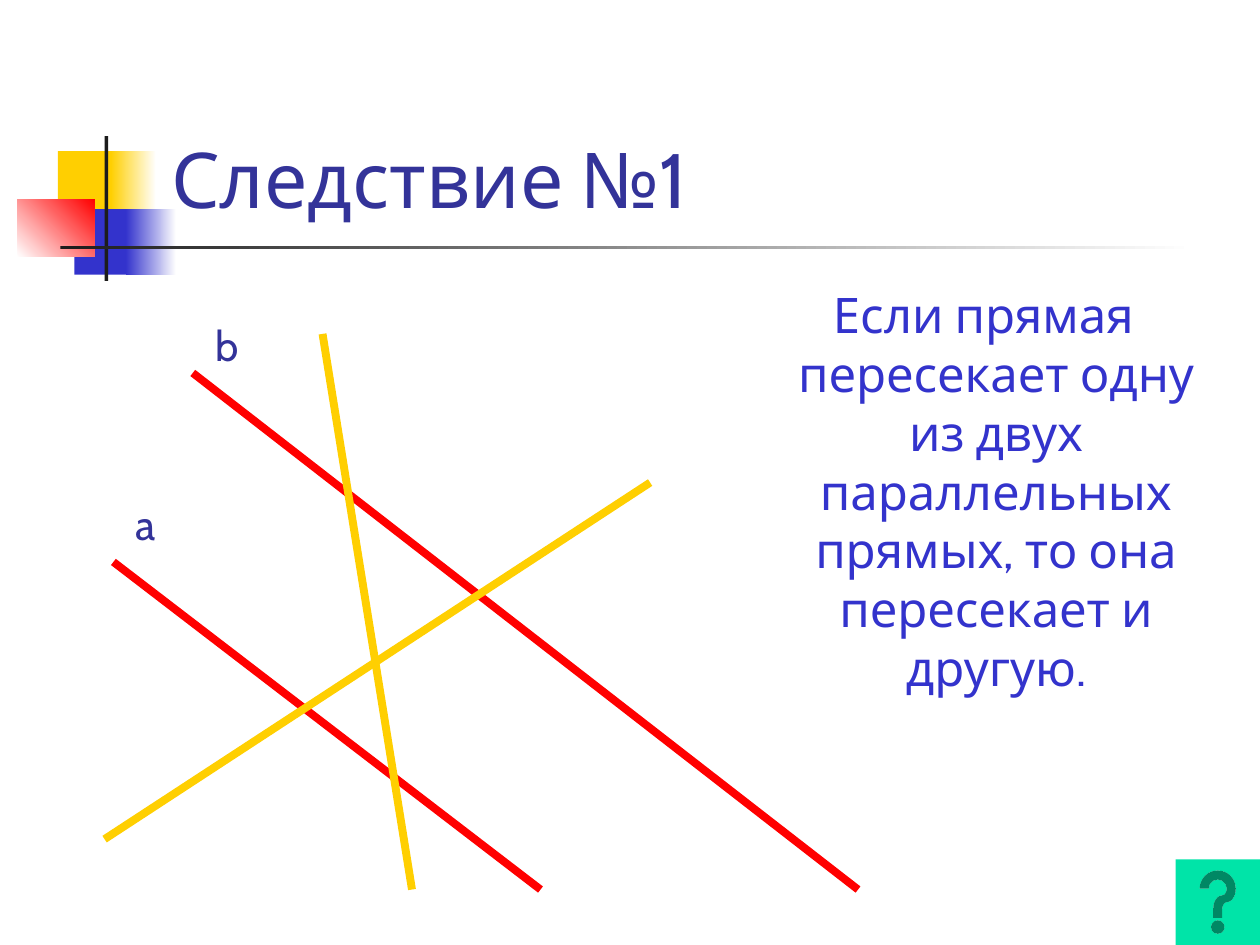
from dataclasses import dataclass
from typing import Optional

from lxml import etree
from pptx import Presentation
from pptx.dml.color import RGBColor
from pptx.enum.shapes import MSO_CONNECTOR, MSO_SHAPE
from pptx.enum.text import MSO_ANCHOR, MSO_AUTO_SIZE, PP_ALIGN
from pptx.oxml.ns import qn
from pptx.util import Inches, Pt

RECTANGLE = MSO_SHAPE.RECTANGLE
HELP_BUTTON = MSO_SHAPE.ACTION_BUTTON_HELP
STRAIGHT = MSO_CONNECTOR.STRAIGHT
LEFT, CENTER = PP_ALIGN.LEFT, PP_ALIGN.CENTER
TOP, BOTTOM = MSO_ANCHOR.TOP, MSO_ANCHOR.BOTTOM
NO_AUTOFIT = MSO_AUTO_SIZE.NONE

FONT = "Cabin"
COLORS = {
    "yellow": "FFCF01",
    "blue": "3333CC",
    "navy": "333399",
    "red": "FF0000",
    "black": "1C1C1C",
    "white": "FFFFFF",
    "green": "00E4A8",
}


@dataclass
class Block:
    left: float
    top: float
    width: float
    height: float
    color: str
    fade_to: Optional[str] = None
    angle: float = 0
    preset: int = RECTANGLE


@dataclass
class Line:
    start: tuple[float, float]
    end: tuple[float, float]
    color: str


@dataclass
class Label:
    left: float
    top: float
    width: float
    height: float
    text: str
    size: float
    color: str
    align: int = LEFT
    anchor: int = TOP


ORNAMENT = [
    Block(0.46, 1.2, 0.48, 0.52, "yellow"),
    Block(0.88, 1.2, 0.36, 0.52, "yellow", "white"),
    Block(0.59, 1.66, 0.46, 0.52, "blue"),
    Block(1, 1.66, 0.4, 0.52, "blue", "white"),
    Block(0.14, 1.58, 0.61, 0.46, "white", "red", 45),
    Block(0.83, 1.08, 0.03, 1.15, "black"),
    Block(0.48, 1.95, 9, 0.03, "black", "white"),
]
HELP = Block(9.33, 6.82, 0.67, 0.68, "green", preset=HELP_BUTTON)

PARALLELS = [
    Line((0.9, 4.46), (4.29, 7.06), "red"),
    Line((1.53, 2.96), (6.81, 7.06), "red"),
]
SECANTS = [
    Line((0.83, 6.66), (5.16, 3.83), "yellow"),
    Line((3.27, 7.06), (2.56, 2.65), "yellow"),
]

TITLE = Label(1.26, 0.23, 8.52, 1.6, "Следствие №1", 44, "navy", anchor=BOTTOM)
STATEMENT = Label(
    5.63, 2.21, 4.17, 4.5,
    "Если прямая пересекает одну из двух параллельных прямых, "
    "то она пересекает и другую.",
    28, "blue", CENTER,
)
LINE_NAMES = [
    Label(0.98, 3.91, 1.1, 0.5, "a", 24, "navy"),
    Label(1.61, 2.49, 1.42, 0.5, "b", 24, "navy"),
]


def rgb(name: str) -> RGBColor:
    return RGBColor.from_string(COLORS[name])


def draw_block(slide, block: Block) -> None:
    shape = slide.shapes.add_shape(
        block.preset, Inches(block.left), Inches(block.top),
        Inches(block.width), Inches(block.height))
    shape.shadow.inherit = False
    shape.line.fill.background()
    if block.fade_to is None:
        shape.fill.solid()
        shape.fill.fore_color.rgb = rgb(block.color)
        return
    shape.fill.gradient()
    shape.fill.gradient_angle = block.angle
    for stop, color, position in zip(
            shape.fill.gradient_stops, (block.color, block.fade_to), (0, 1)):
        stop.color.rgb = rgb(color)
        stop.position = position


def draw_line(slide, line: Line) -> None:
    connector = slide.shapes.add_connector(
        STRAIGHT, *(Inches(value) for value in line.start + line.end))
    connector.line.color.rgb = rgb(line.color)
    connector.line.width = Pt(4.5)
    etree.SubElement(connector._element.spPr, qn("a:effectLst"))


def write_label(shape, label: Label):
    """Place a text shape, fill it and return its paragraph."""
    shape.left, shape.top = Inches(label.left), Inches(label.top)
    shape.width, shape.height = Inches(label.width), Inches(label.height)
    frame = shape.text_frame
    frame.text = label.text
    frame.word_wrap = True
    frame.auto_size = NO_AUTOFIT
    frame.vertical_anchor = label.anchor
    paragraph = frame.paragraphs[0]
    paragraph.alignment = label.align
    font = paragraph.runs[0].font
    font.name = FONT
    font.size = Pt(label.size)
    font.color.rgb = rgb(label.color)
    return paragraph


def add_label(slide, label: Label):
    return write_label(slide.shapes.add_textbox(0, 0, 0, 0), label)


def main() -> None:
    presentation = Presentation()
    presentation.slide_width = Inches(10)
    presentation.slide_height = Inches(7.5)
    slide = presentation.slides.add_slide(presentation.slide_layouts[5])

    # Corner ornament and title
    for block in ORNAMENT:
        draw_block(slide, block)
    write_label(slide.shapes.title, TITLE)

    # Statement with a hanging first line
    properties = add_label(slide, STATEMENT)._p.get_or_add_pPr()
    properties.set("marL", str(Inches(0.38)))
    properties.set("indent", str(Inches(-0.2)))

    # Parallel lines, their names and the lines crossing them
    for line in PARALLELS:
        draw_line(slide, line)
    for name in LINE_NAMES:
        add_label(slide, name)
    for line in SECANTS:
        draw_line(slide, line)

    # Help button
    draw_block(slide, HELP)

    presentation.save("out.pptx")


if __name__ == "__main__":
    main()
